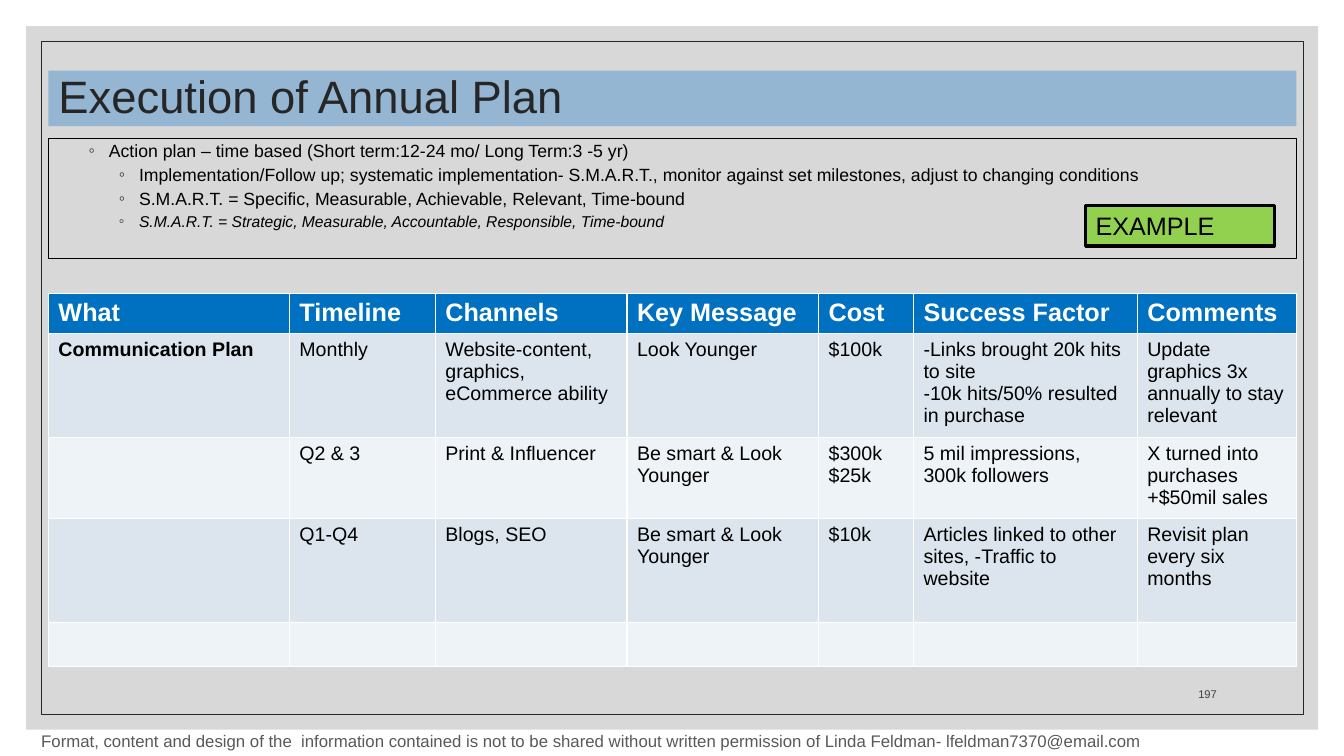
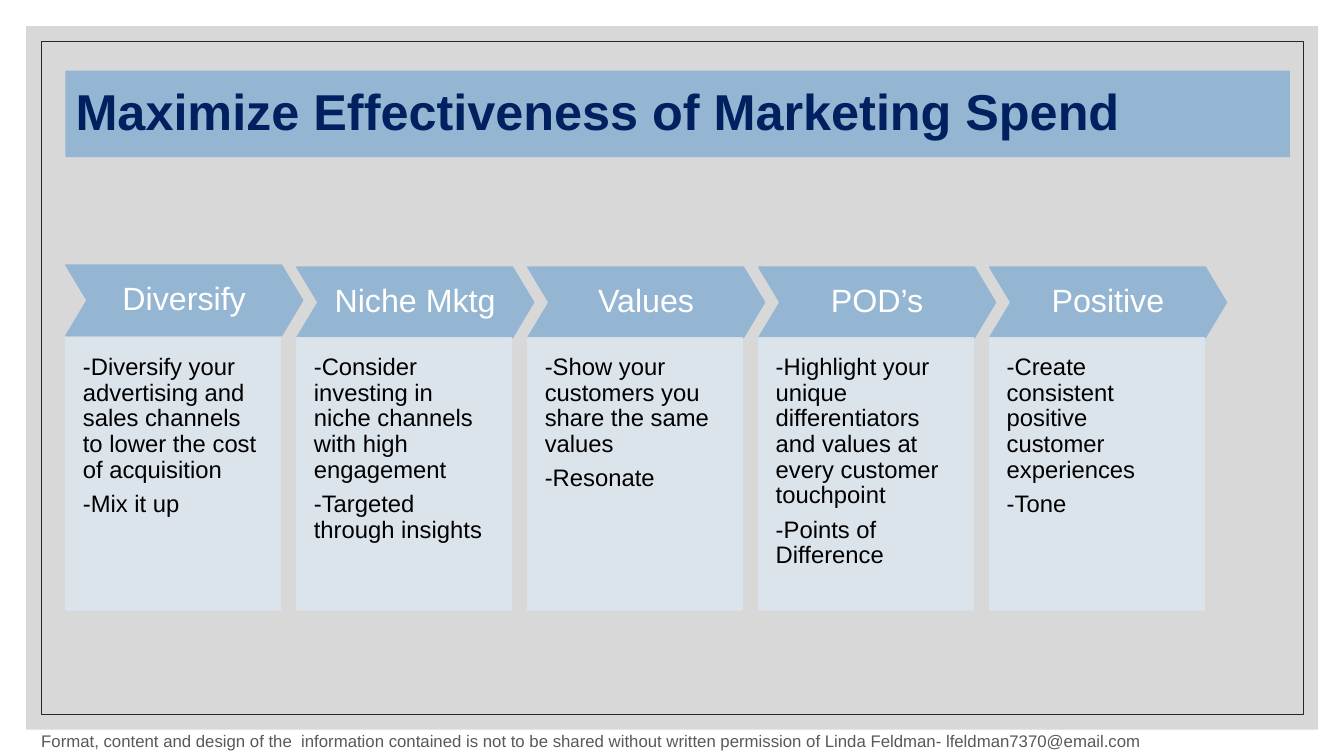
"""Build two marketing-plan slides: an execution table and a row of spend chevrons."""
from lxml import etree
from pptx import Presentation
from pptx import util as u
from pptx.dml.color import RGBColor
from pptx.enum import shapes, text
from pptx.oxml.ns import qn

COLOURS = {
    "panel": "BFBFBF", "frame": "262626", "band": "94B6D2", "navy": "002060",
    "black": "000000", "white": "FFFFFF", "green": "92D050", "header": "0070C0",
    "pale": "DCE5EE", "paler": "EEF3F7", "number": "404040", "footer": "595959",
}
FONT = "Arial"
LEFT, CENTER, RIGHT = text.PP_ALIGN.LEFT, text.PP_ALIGN.CENTER, text.PP_ALIGN.RIGHT
RECT, CHEVRON = shapes.MSO_SHAPE.RECTANGLE, shapes.MSO_SHAPE.CHEVRON
FOOTER = ("Format, content and design of the  information contained is not to be shared "
          "without written permission of Linda Feldman- lfeldman7370@email.com")


def paint(sp, box, fill=None, line=None, width=1, alpha=None):
    sp.left, sp.top, sp.width, sp.height = [u.Cm(v) for v in box]
    for target, colour in ((sp.fill, fill), (sp.line.fill, line)):
        if colour:
            target.solid()
            target.fore_color.rgb = RGBColor.from_string(COLOURS[colour])
        else:
            target.background()
    if line:
        sp.line.width = u.Pt(width)
    if alpha:
        for clr in sp.element.spPr.iter(qn("a:srgbClr")):
            etree.SubElement(clr, qn("a:alpha")).set("val", str(alpha * 1000))
    if not sp.is_placeholder:
        sp.shadow.inherit = False
    return sp


def write(tf, lines, size, colour, bold=False, align=LEFT, spacing=None, after=None):
    for i, line in enumerate(lines):
        p = tf.paragraphs[0] if i == 0 else tf.add_paragraph()
        p.alignment, p.line_spacing = align, spacing
        if after:
            p.space_after = u.Pt(after)
        r = p.add_run()
        r.text = line
        r.font.name, r.font.size, r.font.bold = FONT, u.Pt(size), bold
        r.font.color.rgb = RGBColor.from_string(COLOURS[colour])


prs = Presentation()
prs.slide_width, prs.slide_height = u.Cm(33.87), u.Cm(19.05)
plan = prs.slides.add_slide(prs.slide_layouts[1])
spend = prs.slides.add_slide(prs.slide_layouts[5])

backdrop = [
    ((0.66, 0.66, 32.56, 17.73), "panel", None, 60),
    ((1.04, 1.04, 31.8, 16.97), None, "frame", None),
]
for i, (box, fill, line, alpha) in enumerate(backdrop):
    sp = plan.shapes.add_shape(RECT, 0, 0, 0, 0)
    paint(sp, box, fill, line, 0.5, alpha)
    sp.element.nvSpPr.cNvPr.set("id", str(20 + i))
    prs.slide_master.shapes.element.insert(2 + i, sp.element)

titles = [
    (plan, "Execution of Annual Plan", (1.22, 1.78, 31.45, 1.4), 32.4, "frame", False),
    (spend, "Maximize Effectiveness of Marketing Spend", (1.65, 1.78, 30.86, 2.18), 36, "navy", True),
]
for s, title, box, size, colour, bold in titles:
    tf = paint(s.shapes.title, box, "band").text_frame
    tf.auto_size = text.MSO_AUTO_SIZE.NONE
    tf.vertical_anchor = text.MSO_ANCHOR.MIDDLE
    write(tf, [title], size, colour, bold, spacing=0.9)

bullets = [
    (1, "Action plan – time based (Short term:12-24 mo/ Long Term:3 -5 yr)"),
    (2, "Implementation/Follow up; systematic implementation- S.M.A.R.T., monitor against "
        "set milestones, adjust to changing conditions"),
    (2, "S.M.A.R.T. = Specific, Measurable, Achievable, Relevant, Time-bound"),
    (2, "S.M.A.R.T. = Strategic, Measurable, Accountable, Responsible, Time-bound"),
]
tf = paint(plan.placeholders[1], (1.22, 3.5, 31.45, 3.02), None, "black", 0.75).text_frame
tf.auto_size = text.MSO_AUTO_SIZE.NONE
write(tf, [line for level, line in bullets], 12.6, "black", spacing=0.8)
for p, (level, line) in zip(tf.paragraphs, bullets):
    p.level, p.space_before = level, u.Pt(5)
    pPr = p._p.get_or_add_pPr()
    pPr.set("marL", str(u.Cm(0.51 + 0.76 * level)))
    pPr.set("indent", str(u.Cm(-0.51)))
    clr = etree.SubElement(pPr, qn("a:buClr"))
    etree.SubElement(clr, qn("a:srgbClr")).set("val", COLOURS["frame"])
    etree.SubElement(pPr, qn("a:buChar")).set("char", "◦")
r = tf.paragraphs[-1].runs[0]
r.font.size, r.font.italic = u.Pt(11.2), True

sp = plan.shapes.add_shape(RECT, 0, 0, 0, 0)
paint(sp, (27.36, 5.18, 4.75, 1.02), "green", "black", 2.25)
write(sp.text_frame, ["EXAMPLE"], 18, "black")

sp = plan.shapes.add_textbox(u.Cm(28.58), u.Cm(16.76), u.Cm(2.34), u.Cm(1.02))
sp.text_frame.word_wrap = True
sp.text_frame.vertical_anchor = text.MSO_ANCHOR.BOTTOM
write(sp.text_frame, ["197"], 8, "number", align=RIGHT)

rows = [
    ["What", "Timeline", "Channels", "Key Message", "Cost", "Success Factor", "Comments"],
    ["Communication Plan", "Monthly", "Website-content, graphics, eCommerce ability",
     "Look Younger", "$100k",
     "-Links brought 20k hits to site\n-10k hits/50% resulted in purchase",
     "Update graphics 3x annually to stay relevant"],
    ["", "Q2 & 3", "Print & Influencer", "Be smart & Look Younger", "$300k\n$25k",
     "5 mil impressions, 300k followers", "X turned into purchases\n+$50mil sales"],
    ["", "Q1-Q4", "Blogs, SEO", "Be smart & Look Younger", "$10k",
     "Articles linked to other sites, -Traffic to website", "Revisit plan every six months"],
    [""] * 7,
]
widths = [6.07, 3.68, 4.83, 4.83, 2.39, 5.64, 4.01]
heights = [1.01, 2.62, 2.04, 2.62, 1.11]
table = plan.shapes.add_table(len(rows), len(widths), u.Cm(1.22), u.Cm(7.39),
                              u.Cm(sum(widths)), u.Cm(sum(heights))).table
for column, width in zip(table.columns, widths):
    column.width = u.Cm(width)
for i, row in enumerate(rows):
    table.rows[i].height = u.Cm(heights[i])
    fill = "header" if i == 0 else ("paler", "pale")[i % 2]
    for j, value in enumerate(row):
        cell = table.cell(i, j)
        cell.fill.solid()
        cell.fill.fore_color.rgb = RGBColor.from_string(COLOURS[fill])
        if value:
            write(cell.text_frame, value.split("\n"), 14 if i else 18,
                  "black" if i else "white", bold=i == 0 or j == 0)

steps = [
    ("Diversify", ["-Diversify your advertising and sales channels to lower the cost of acquisition",
                   "-Mix it up"]),
    ("Niche Mktg", ["-Consider investing in niche channels with high engagement",
                    "-Targeted through insights"]),
    ("Values", ["-Show your customers you share the same values", "-Resonate"]),
    ("POD’s", ["-Highlight your unique differentiators and values at every customer touchpoint",
               "-Points of Difference"]),
    ("Positive", ["-Create consistent positive customer experiences", "-Tone"]),
]
for i, (heading, lines) in enumerate(steps):
    x = 1.66 + 5.82 * i
    sp = spend.shapes.add_shape(CHEVRON, 0, 0, 0, 0)
    sp.adjustments[0] = 0.3
    paint(sp, (x, 6.73 if i else 6.68, 5.97, 1.78), "band", "band")
    sp.text_frame.word_wrap = False
    write(sp.text_frame, [heading], 23, "white", align=CENTER, spacing=0.9)

    sp = spend.shapes.add_shape(RECT, 0, 0, 0, 0)
    paint(sp, (x, 8.51, 5.41, 6.86), "pale", "pale", alpha=90)
    tf = sp.text_frame
    tf.vertical_anchor = text.MSO_ANCHOR.TOP
    tf.margin_left = tf.margin_top = tf.margin_right = u.Cm(0.43)
    tf.margin_bottom = u.Cm(0.86)
    write(tf, lines, 17, "black", spacing=0.9, after=6)

for s in prs.slides:
    sp = s.shapes.add_textbox(u.Cm(0.79), u.Cm(18.29), u.Cm(31.5), u.Cm(0.76))
    sp.text_frame.word_wrap = True
    write(sp.text_frame, [FOOTER], 12, "footer")

prs.save("out.pptx")
